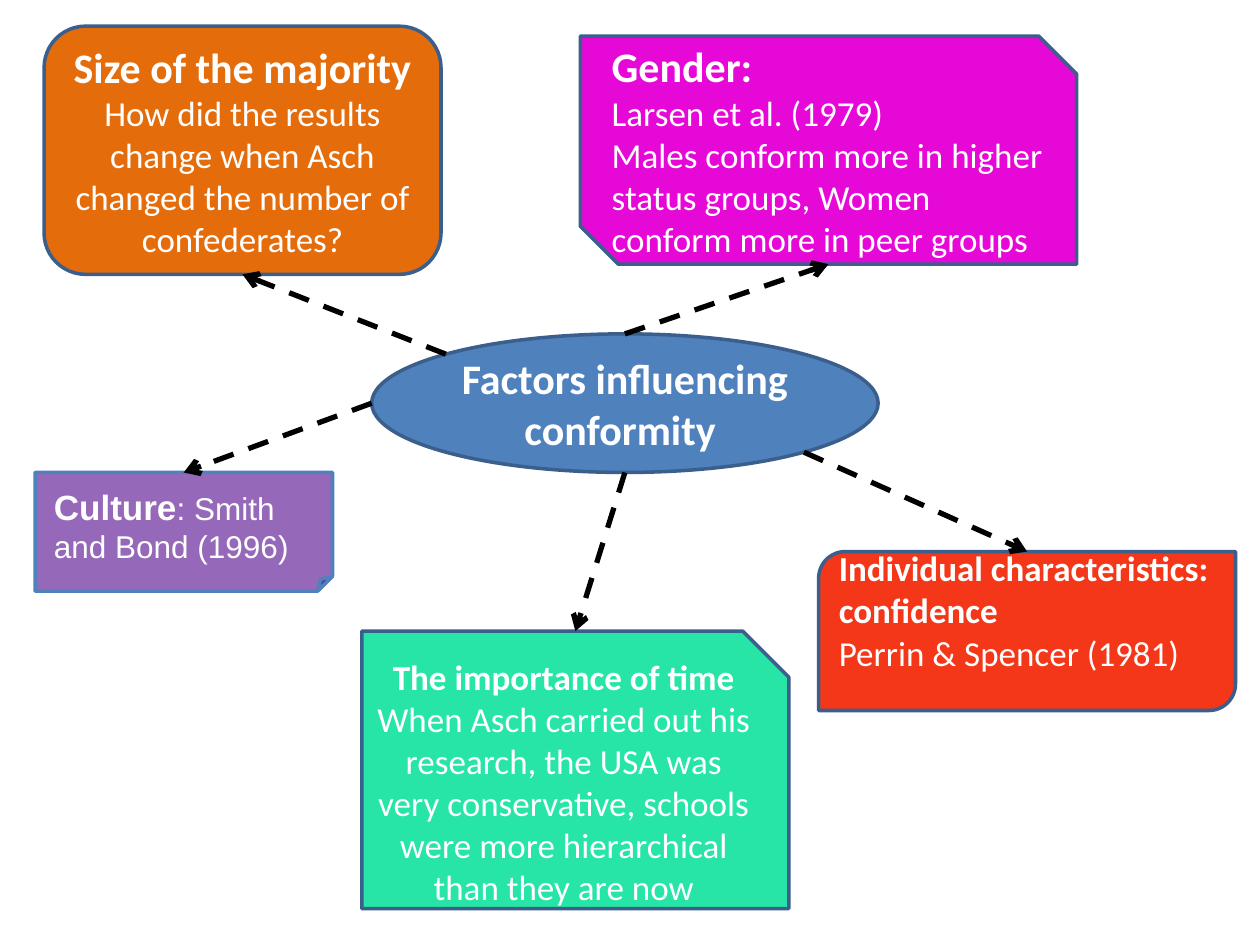
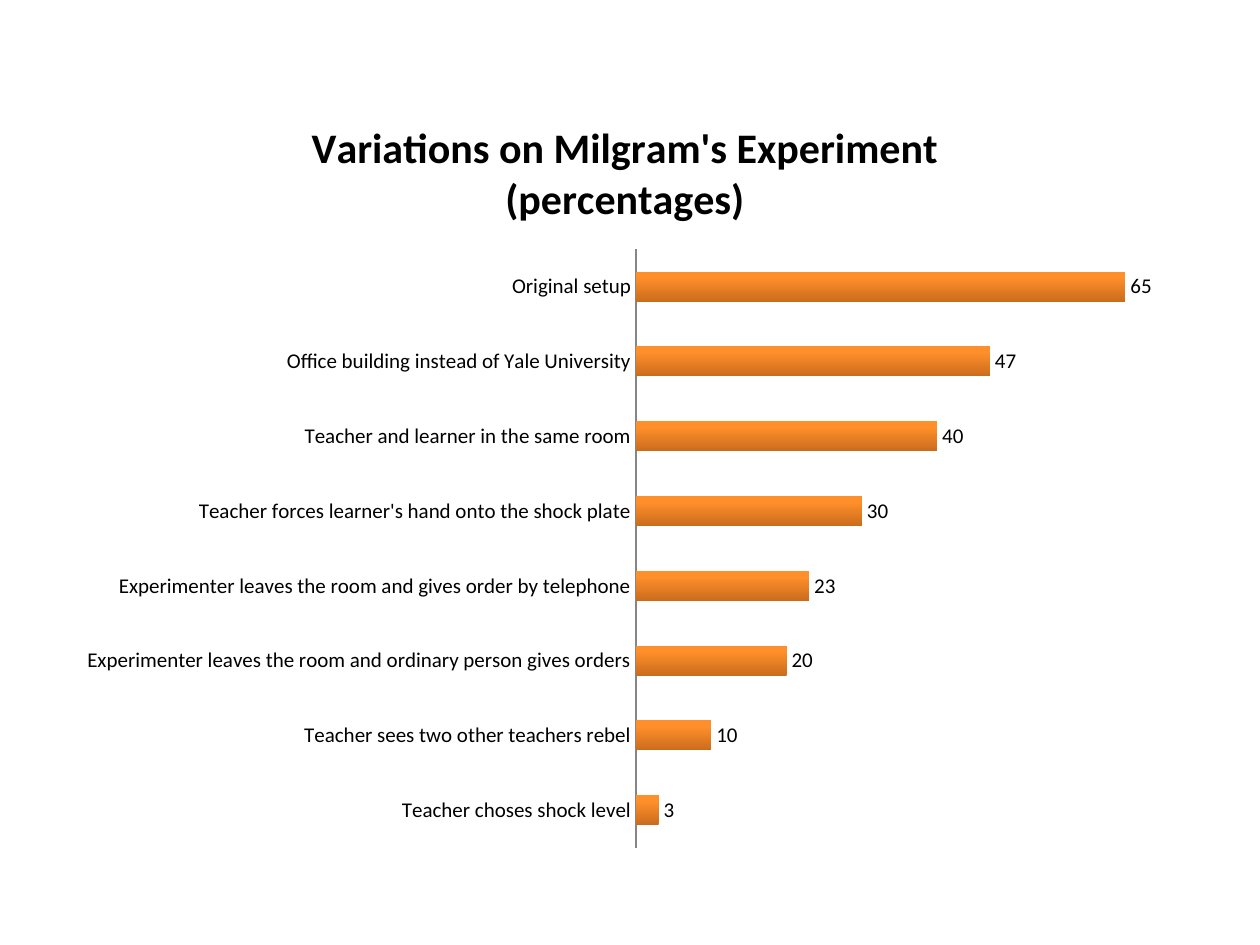
from lxml import etree
from pptx import Presentation
from pptx.chart.data import CategoryChartData
from pptx.dml.color import RGBColor
from pptx.enum.chart import XL_CHART_TYPE, XL_LABEL_POSITION, XL_TICK_MARK
from pptx.enum.dml import MSO_LINE
from pptx.enum.shapes import MSO_CONNECTOR, MSO_SHAPE as SHAPE
from pptx.enum.text import MSO_ANCHOR as ANCHOR, PP_ALIGN as ALIGN
from pptx.oxml import parse_xml
from pptx.oxml.ns import nsdecls, qn
from pptx.util import Pt

COLORS = {
    "blue": "4F81BD", "outline": "3A5F8C", "orange": "E46C0A", "green": "27E5A6",
    "magenta": "E608D6", "red": "F43718", "purple": "7030A0", "white": "FFFFFF",
    "black": "000000", "axis": "868686", "bar_dark": "CB6C1D", "bar_light": "FF8F2A",
}


def rgb(name):
    return RGBColor.from_string(COLORS[name])


def set_font(font, **values):
    values = {"name": "Calibri", "bold": False, **values}
    font.color.rgb = rgb(values.pop("color", "black"))
    for key, value in values.items():
        setattr(font, key, value)


prs = Presentation()
prs.slide_width, prs.slide_height = Pt(720), Pt(540)
blank = prs.slide_layouts[6]

# Slide 1: factors around a central ellipse
s = prs.slides.add_slide(blank)

# key: (preset, box, fill, line, alignment, frame format, paragraphs of (text, size, bold))
mid = {"vertical_anchor": ANCHOR.MIDDLE}
factors = {
    "center": (SHAPE.OVAL, (212.4, 190.8, 289.4, 79.2), "blue", "outline", ALIGN.CENTER, mid,
               [[("Factors influencing conformity ", 24, True)]]),
    "majority": (SHAPE.ROUNDED_RECTANGLE, (25.2, 15, 226.8, 141.8), "orange", "outline",
                 ALIGN.CENTER, mid,
                 [[("Size of the majority", 24, True)],
                  [("How did the results change when Asch changed the number of "
                    "confederates?", 20, False)]]),
    "time": (SHAPE.SNIP_1_RECTANGLE, (206.8, 360.6, 244, 158.6), "green", "outline",
             ALIGN.CENTER, mid,
             [[("The importance of time", 20, True)],
              [("When Asch carried out his research, the USA was very conservative, "
                "schools were more hierarchical than they are now", 20, False)]]),
    "gender": (SHAPE.SNIP_2_DIAG_RECTANGLE, (331.6, 20.6, 283.6, 130.4), "magenta", "outline",
               ALIGN.LEFT, mid,
               [[("Gender:", 24, True)],
                [("Larsen et al. (1979)", 20, False)],
                [("Males conform more in higher status groups, Women conform more in "
                  "peer groups", 20, False)]]),
    "individual": (SHAPE.ROUND_2_DIAG_RECTANGLE, (467.8, 315.2, 238.2, 90.8), "red", "outline",
                   ALIGN.LEFT, {**mid, "margin_bottom": Pt(27.6)},
                   [[("Individual characteristics: confidence", 20, True)],
                    [("Perrin & Spencer (1981)", 20, False)]]),
    "culture": (SHAPE.FOLDED_CORNER, (20, 270, 170, 67.8), "purple", "blue", ALIGN.LEFT,
                {"vertical_anchor": ANCHOR.TOP, "margin_left": Pt(10.8),
                 "margin_right": Pt(10.8), "margin_top": Pt(7.2)},
                [[("Culture", 20, True), (": Smith and Bond (1996)", 18, False)]]),
}

shapes = {}
for key, (preset, box, fill, line, align, frame, paragraphs) in factors.items():
    sp = shapes[key] = s.shapes.add_shape(preset, *map(Pt, box))
    sp.shadow.inherit = False
    sp.fill.solid()
    sp.fill.fore_color.rgb = rgb(fill)
    sp.line.color.rgb = rgb(line)
    sp.line.width = Pt(2)
    tf = sp.text_frame
    for name, value in {"word_wrap": True, **frame}.items():
        setattr(tf, name, value)
    for i, runs in enumerate(paragraphs):
        p = tf.add_paragraph() if i else tf.paragraphs[0]
        p.alignment = align
        for text, size, bold in runs:
            r = p.add_run()
            r.text = text
            set_font(r.font, name="Arial" if key == "culture" else "Calibri",
                     size=Pt(size), bold=bold, color="white")

# Folded note: small fold, slightly transparent fill
sp_pr = shapes["culture"]._element.spPr
guides = sp_pr.find(qn("a:prstGeom")).get_or_add_avLst()
etree.SubElement(guides, qn("a:gd"), name="adj", fmla="val 12500")
etree.SubElement(sp_pr.find(qn("a:solidFill"))[0], qn("a:alpha"), val="73000")

# Dashed arrows: start on the ellipse, end, target and its connection site
arrows = [
    ((254.8, 202.4), (138.6, 156.8), "majority", 2),
    ((357.1, 190.8), (473.4, 151), "gender", None),
    ((459.4, 258.4), (586.9, 315.2), "individual", None),
    ((357.1, 270), (328.8, 360.6), "time", None),
    ((212.4, 230.4), (105, 270), "culture", 0),
]
for start, end, target, site in arrows:
    cx = s.shapes.add_connector(MSO_CONNECTOR.STRAIGHT, *map(Pt, start + end))
    if site is not None:
        cx.end_connect(shapes[target], site)
    cx.line.color.rgb = rgb("black")
    cx.line.width = Pt(3)
    cx.line.dash_style = MSO_LINE.DASH
    cx_pr = cx._element.spPr
    etree.SubElement(cx_pr.find(qn("a:ln")), qn("a:tailEnd"), type="arrow")
    etree.SubElement(cx_pr, qn("a:effectLst"))

# Slide 2: bar chart of the experiment's variations
s = prs.slides.add_slide(blank)
results = {
    "Teacher choses shock level": 3,
    "Teacher sees two other teachers rebel": 10,
    "Experimenter leaves the room and ordinary person gives orders": 20,
    "Experimenter leaves the room and gives order by telephone": 23,
    "Teacher forces learner's hand onto the shock plate": 30,
    "Teacher and learner in the same room": 40,
    "Office building instead of Yale University": 47,
    "Original setup": 65,
}
data = CategoryChartData()
data.categories = list(results)
data.add_series("Series 1", list(results.values()))
chart = s.shapes.add_chart(XL_CHART_TYPE.BAR_CLUSTERED, Pt(36.7), Pt(54.7), Pt(640.8),
                           Pt(438.5), data).chart
set_font(chart.font, size=Pt(12))
chart.has_legend = False

# Chart title
chart.has_title = True
tf = chart.chart_title.text_frame
for i, text in enumerate(["Variations on Milgram's Experiment", "(percentages)"]):
    p = tf.add_paragraph() if i else tf.paragraphs[0]
    r = p.add_run()
    r.text = text
    set_font(r.font, size=Pt(24), bold=True)
chart.chart_title.include_in_layout = False

# Axes
cat, val = chart.category_axis, chart.value_axis
cat.major_tick_mark = cat.minor_tick_mark = XL_TICK_MARK.NONE
cat.format.line.color.rgb = rgb("axis")
cat.format.line.width = Pt(0.75)
val.has_major_gridlines = False
val.minimum_scale, val.maximum_scale = 0, 70
val.visible = False

# Bars and their labels
plot = chart.plots[0]
plot.gap_width, plot.overlap, plot.vary_by_categories = 150, -25, False
plot.has_data_labels = True
labels = plot.data_labels
labels.show_value = True
labels.position = XL_LABEL_POSITION.OUTSIDE_END
set_font(labels.font, size=Pt(12))
fill = plot.series[0].format.fill
fill.gradient()
fill.gradient_angle = 90
for stop, color, position in zip(fill.gradient_stops, ("bar_dark", "bar_light"), (0, 0.8)):
    stop.color.rgb = rgb(color)
    stop.position = position

# Plot area inside the chart frame
area = chart._chartSpace.chart.plotArea
for old in area.findall(qn("c:layout")):
    area.remove(old)
places = "".join(f'<c:{k} val="{v}"/>' for k, v in [
    ("layoutTarget", "inner"), ("xMode", "edge"), ("yMode", "edge"),
    ("x", 0.51), ("y", 0.2), ("w", 0.47), ("h", 0.78)])
area.insert(0, parse_xml(
    f'<c:layout {nsdecls("c")}><c:manualLayout>{places}</c:manualLayout></c:layout>'))

prs.save("out.pptx")
